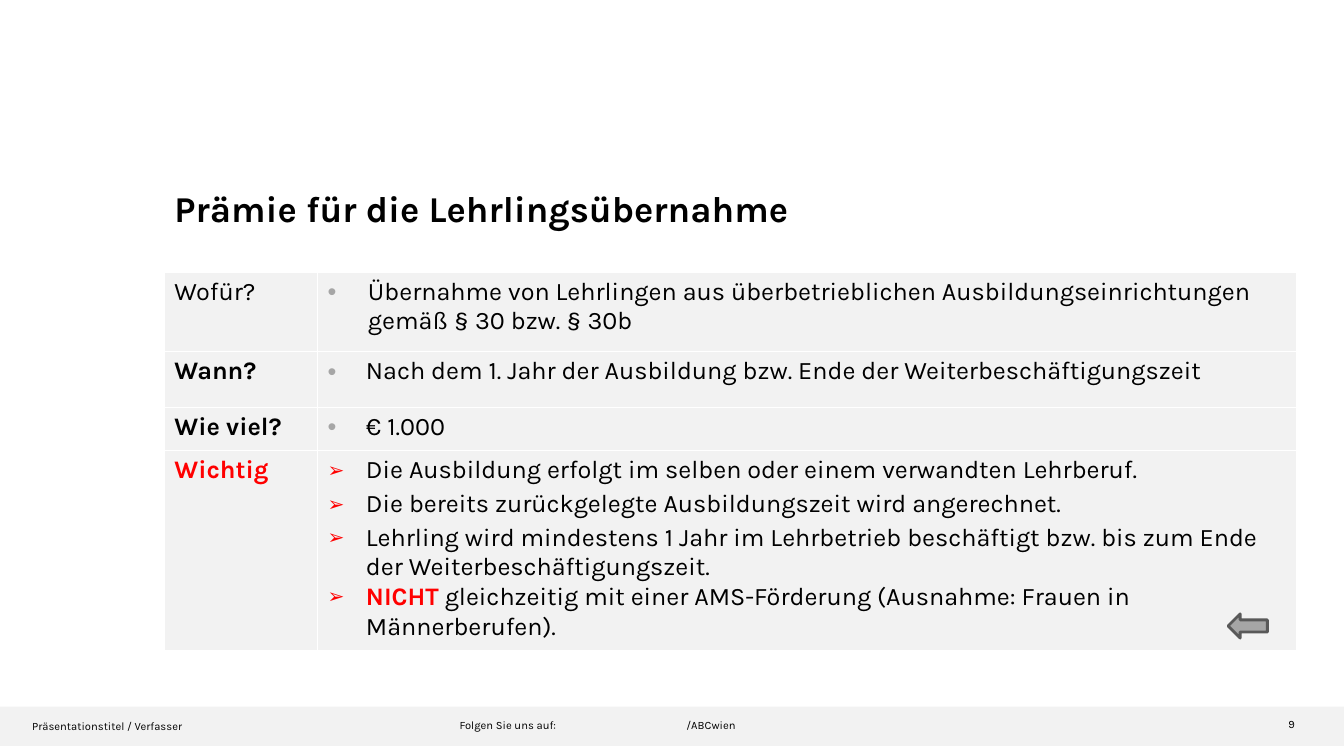
from lxml import etree
from pptx import Presentation
from pptx.dml.color import RGBColor
from pptx.enum.shapes import MSO_SHAPE
from pptx.enum.text import MSO_ANCHOR, MSO_AUTO_SIZE, PP_ALIGN
from pptx.oxml.ns import qn
from pptx.util import Inches, Pt

RECT, LEFT_ARROW = MSO_SHAPE.RECTANGLE, MSO_SHAPE.LEFT_ARROW
BOTTOM, NO_FIT = MSO_ANCHOR.BOTTOM, MSO_AUTO_SIZE.NONE
LEFT, CENTER = PP_ALIGN.LEFT, PP_ALIGN.CENTER
FONT = "Karla"
BLACK, RED, WHITE = "000000", "FF0000", "FFFFFF"
PALE, GRAY, DARK = "F2F2F2", "A6A6A6", "595959"
DOT = {"char": "•", "color": GRAY, "size": 100}
ARROWHEAD = {"char": "➢", "color": RED, "size": 80}
BOLD = {"bold": True}
ALERT = {"bold": True, "color": RED}

ROWS = [
    (0.79, ("Wofür?", {}), 0.4, DOT, [
        [("Übernahme von Lehrlingen aus überbetrieblichen Ausbildungseinrichtungen "
          "gemäß § 30 bzw. § 30b", {})]]),
    (0.55, ("Wann?", BOLD), 0.38, DOT, [
        [("Nach dem 1. Jahr der Ausbildung bzw. Ende der Weiterbeschäftigungszeit", {})]]),
    (0.43, ("Wie viel?", BOLD), 0.38, DOT, [[("€ 1.000", {})]]),
    (1.93, ("Wichtig", ALERT), 0.38, ARROWHEAD, [
        [("Die Ausbildung erfolgt im selben oder einem verwandten Lehrberuf.", {})],
        [("Die bereits zurückgelegte Ausbildungszeit wird angerechnet.", {})],
        [("Lehrling wird mindestens 1 Jahr im Lehrbetrieb beschäftigt bzw. bis zum Ende "
          "der Weiterbeschäftigungszeit.", {})],
        [("NICHT", ALERT),
         (" gleichzeitig mit einer AMS-Förderung (Ausnahme: Frauen in Männerberufen).", {})]]),
]
FOOTER = [
    ("Präsentationstitel / Verfasser", 0.22, 7.09, 2.73, LEFT),
    ("Folgen Sie uns auf:", 4.46, 7.08, 1.6, LEFT),
    ("/ABCwien", 6.71, 7.08, 1.6, LEFT),
    ("9", 11.29, 7.07, 3.04, CENTER),
]


def rgb(value):
    return RGBColor.from_string(value)


def add_run(p, text, size, bold=False, color=BLACK):
    r = p.add_run()
    r.text = text
    for name, value in {"name": FONT, "size": Pt(size), "bold": bold}.items():
        setattr(r.font, name, value)
    r.font.color.rgb = rgb(color)


def add_bullet(p, indent, bullet):
    pPr = p._p.get_or_add_pPr()
    pPr.set("marL", str(Inches(indent)))
    pPr.set("indent", str(-Inches(indent)))
    clr = etree.SubElement(pPr, qn("a:buClr"))
    etree.SubElement(clr, qn("a:srgbClr"), val=bullet["color"])
    etree.SubElement(pPr, qn("a:buSzPct"), val=str(bullet["size"] * 1000))
    etree.SubElement(pPr, qn("a:buFont"), typeface="Arial")
    etree.SubElement(pPr, qn("a:buChar"), char=bullet["char"])


def add_shape(s, kind, x, y, w, h, fill, line=None):
    sp = s.shapes.add_shape(kind, Inches(x), Inches(y), Inches(w), Inches(h))
    sp.shadow.inherit = False
    sp.fill.solid()
    sp.fill.fore_color.rgb = rgb(fill)
    if line:
        sp.line.color.rgb = rgb(line)
        sp.line.width = Pt(2)
    else:
        sp.line.fill.background()


def add_text(s, text, x, y, w, align):
    tf = s.shapes.add_textbox(Inches(x), Inches(y), Inches(w), Inches(0.24)).text_frame
    tf.word_wrap = True
    p = tf.paragraphs[0]
    p.alignment = align
    add_run(p, text, 8)


def add_title(s, text):
    sp = s.shapes.title
    place = {"left": 1.63, "top": 1.34, "width": 11.23, "height": 0.99}
    for name, value in place.items():
        setattr(sp, name, Inches(value))
    tf = sp.text_frame
    for name, value in {"vertical_anchor": BOTTOM, "word_wrap": True, "auto_size": NO_FIT}.items():
        setattr(tf, name, value)
    p = tf.paragraphs[0]
    p.alignment = LEFT
    add_run(p, text, 26, bold=True)


def format_cell(cell):
    tcPr = cell._tc.get_or_add_tcPr()
    for side in ("lnL", "lnR", "lnT", "lnB"):
        ln = etree.SubElement(tcPr, qn("a:" + side), w=str(Pt(1)))
        fill = etree.SubElement(ln, qn("a:solidFill"))
        etree.SubElement(fill, qn("a:srgbClr"), val=WHITE)
    cell.fill.solid()
    cell.fill.fore_color.rgb = rgb(PALE)


def add_details(tf, indent, bullet, items):
    for i, runs in enumerate(items):
        p = tf.paragraphs[0] if i == 0 else tf.add_paragraph()
        add_bullet(p, indent, bullet)
        p.space_before = Pt(3 if 0 < i < 3 else 0)
        for text, style in runs:
            add_run(p, text, 18, **style)


def add_premium_table(s):
    height = sum(row[0] for row in ROWS)
    table = s.shapes.add_table(len(ROWS), 2, Inches(1.63), Inches(2.7),
                               Inches(11.23), Inches(height)).table
    table.first_row = table.horz_banding = False
    for column, width in zip(table.columns, (1.52, 9.71)):
        column.width = Inches(width)
    for i, (row_height, (label, style), indent, bullet, items) in enumerate(ROWS):
        table.rows[i].height = Inches(row_height)
        for cell in table.rows[i].cells:
            format_cell(cell)
        add_run(table.cell(i, 0).text_frame.paragraphs[0], label, 18, **style)
        add_details(table.cell(i, 1).text_frame, indent, bullet, items)


def main():
    prs = Presentation()
    prs.slide_width, prs.slide_height = Inches(13.33), Inches(7.5)
    s = prs.slides.add_slide(prs.slide_layouts[5])
    add_shape(s, RECT, 0, 7.01, 13.33, 0.39, PALE)
    for item in FOOTER:
        add_text(s, *item)
    add_title(s, "Prämie für die Lehrlingsübernahme")
    add_premium_table(s)
    add_shape(s, LEFT_ARROW, 12.18, 6.09, 0.39, 0.24, GRAY, DARK)
    prs.save("out.pptx")


if __name__ == "__main__":
    main()
